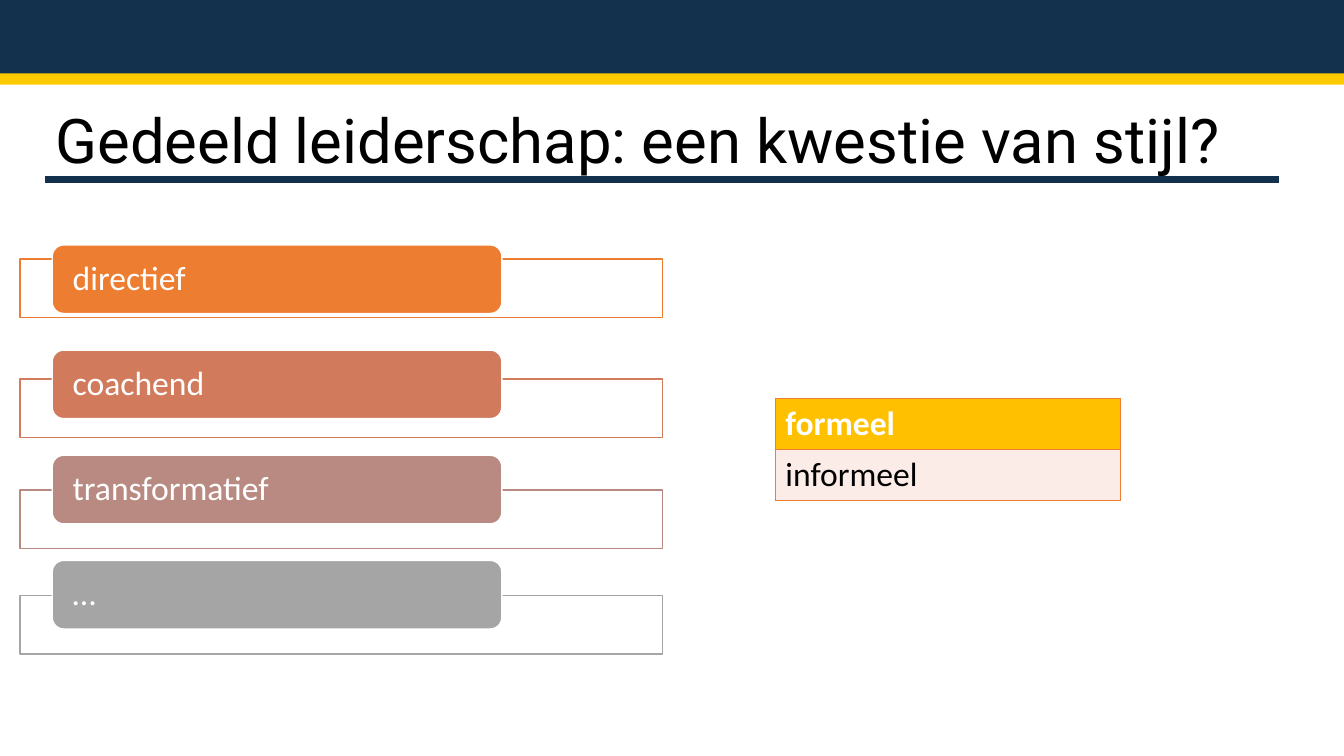
from lxml.etree import SubElement
from pptx import Presentation
from pptx.dml.color import RGBColor
from pptx.enum.shapes import MSO_CONNECTOR, MSO_SHAPE
from pptx.enum.text import MSO_ANCHOR, MSO_AUTO_SIZE, PP_ALIGN
from pptx.oxml.ns import qn
from pptx.util import Inches, Pt

NAVY = RGBColor(0x13, 0x30, 0x4C)
YELLOW = RGBColor(0xFD, 0xC9, 0x00)
AMBER = RGBColor(0xFF, 0xC0, 0x00)
ORANGE = RGBColor(0xED, 0x7D, 0x31)
TERRACOTTA = RGBColor(0xD1, 0x7B, 0x5C)
ROSE = RGBColor(0xB9, 0x8A, 0x82)
GREY = RGBColor(0xA5, 0xA5, 0xA5)
BLUSH = RGBColor(0xFC, 0xEC, 0xE8)
WHITE = RGBColor(0xFF, 0xFF, 0xFF)
BLACK = RGBColor(0x00, 0x00, 0x00)

# Style name, colour and top of the frame behind it, from the top of the list
STYLES = [
    ("directief", ORANGE, 0.14),
    ("coachend", TERRACOTTA, 1.33),
    ("transformatief", ROSE, 2.43),
    ("…", GREY, 3.48),
]
FORMS = [("formeel", AMBER, WHITE, True), ("informeel", BLUSH, BLACK, False)]


def add_box(slide, kind, left, top, width, height, fill, line=None):
    box = slide.shapes.add_shape(
        kind, Inches(left), Inches(top), Inches(width), Inches(height))
    box.shadow.inherit = False
    box.fill.solid()
    box.fill.fore_color.rgb = fill
    if line is None:
        box.line.fill.background()
    else:
        box.line.color.rgb = line
        box.line.width = Pt(1)
    return box


def add_text(paragraph, text, size, font, color, bold=False):
    run = paragraph.add_run()
    run.text = text
    run.font.size = Pt(size)
    run.font.name = font
    run.font.color.rgb = color
    run.font.bold = bold


def add_backdrop(slide, width, height):
    # Yellow background shows as a stripe between band and page
    slide.background.fill.solid()
    slide.background.fill.fore_color.rgb = YELLOW
    add_box(slide, MSO_SHAPE.RECTANGLE, 0, 0, width, 0.73, NAVY)
    add_box(slide, MSO_SHAPE.RECTANGLE, 0, 0.84, width, height - 0.84, WHITE)


def add_heading(slide, left, top, width, height):
    # Rule under the title
    rule_y = Inches(top + height + 0.07)
    rule = slide.shapes.add_connector(
        MSO_CONNECTOR.STRAIGHT, Inches(left), rule_y, Inches(left + width), rule_y)
    rule.line.color.rgb = NAVY
    rule.line.width = Pt(4.5)
    SubElement(rule._element.spPr, qn("a:effectLst"))

    # Title, brought in front of the white page
    title = slide.shapes.title
    slide.shapes._spTree.append(title._element)
    title.left, title.top = Inches(left), Inches(top)
    title.width, title.height = Inches(width), Inches(height)
    frame = title.text_frame
    frame.word_wrap = True
    frame.auto_size = MSO_AUTO_SIZE.NONE
    frame.vertical_anchor = MSO_ANCHOR.TOP
    paragraph = frame.paragraphs[0]
    paragraph.alignment = PP_ALIGN.LEFT
    paragraph.line_spacing = 0.9
    add_text(paragraph, "Gedeeld leiderschap: een kwestie van stijl?",
             44, "Roboto", BLACK)


def add_styles(slide, left, top, width, height):
    label_height = 0.68
    pitch = (height - label_height) / (len(STYLES) - 1)
    for index, (name, color, frame_top) in enumerate(STYLES):
        add_box(slide, MSO_SHAPE.RECTANGLE, left, top + frame_top,
                width, 0.58, WHITE, color)
        label = add_box(slide, MSO_SHAPE.ROUNDED_RECTANGLE, left + 0.05 * width,
                        top + index * pitch, 0.7 * width, label_height, color, WHITE)
        frame = label.text_frame
        frame.word_wrap = True
        frame.vertical_anchor = MSO_ANCHOR.MIDDLE
        frame.margin_left = frame.margin_right = Inches(0.17)
        frame.margin_top = frame.margin_bottom = 0
        paragraph = frame.paragraphs[0]
        paragraph.alignment = PP_ALIGN.LEFT
        paragraph.line_spacing = 0.9
        add_text(paragraph, name, 24, "Calibri", WHITE)


def add_borders(cell, color):
    properties = cell._tc.get_or_add_tcPr()
    for position, side in enumerate(("a:lnL", "a:lnR", "a:lnT", "a:lnB")):
        line = properties.makeelement(qn(side), {"w": str(Pt(1))})
        properties.insert(position, line)
        fill = SubElement(line, qn("a:solidFill"))
        SubElement(fill, qn("a:srgbClr"), val=str(color))


def add_forms(slide, left, top, width, height):
    table = slide.shapes.add_table(
        len(FORMS), 1, Inches(left), Inches(top), Inches(width), Inches(height)).table
    for row, (name, fill, color, bold) in enumerate(FORMS):
        cell = table.cell(row, 0)
        cell.fill.solid()
        cell.fill.fore_color.rgb = fill
        add_text(cell.text_frame.paragraphs[0], name, 24, "Calibri", color, bold)
        add_borders(cell, ORANGE)


def main():
    width, height = 13.33, 7.5
    deck = Presentation()
    deck.slide_width, deck.slide_height = Inches(width), Inches(height)
    slide = deck.slides.add_slide(deck.slide_layouts[5])
    add_backdrop(slide, width, height)
    add_heading(slide, 0.45, 1.04, 12.24, 0.67)
    add_styles(slide, 0.2, 2.43, 6.37, 3.81)
    add_forms(slide, 7.69, 3.95, 3.42, 1)
    deck.save("out.pptx")


if __name__ == "__main__":
    main()
